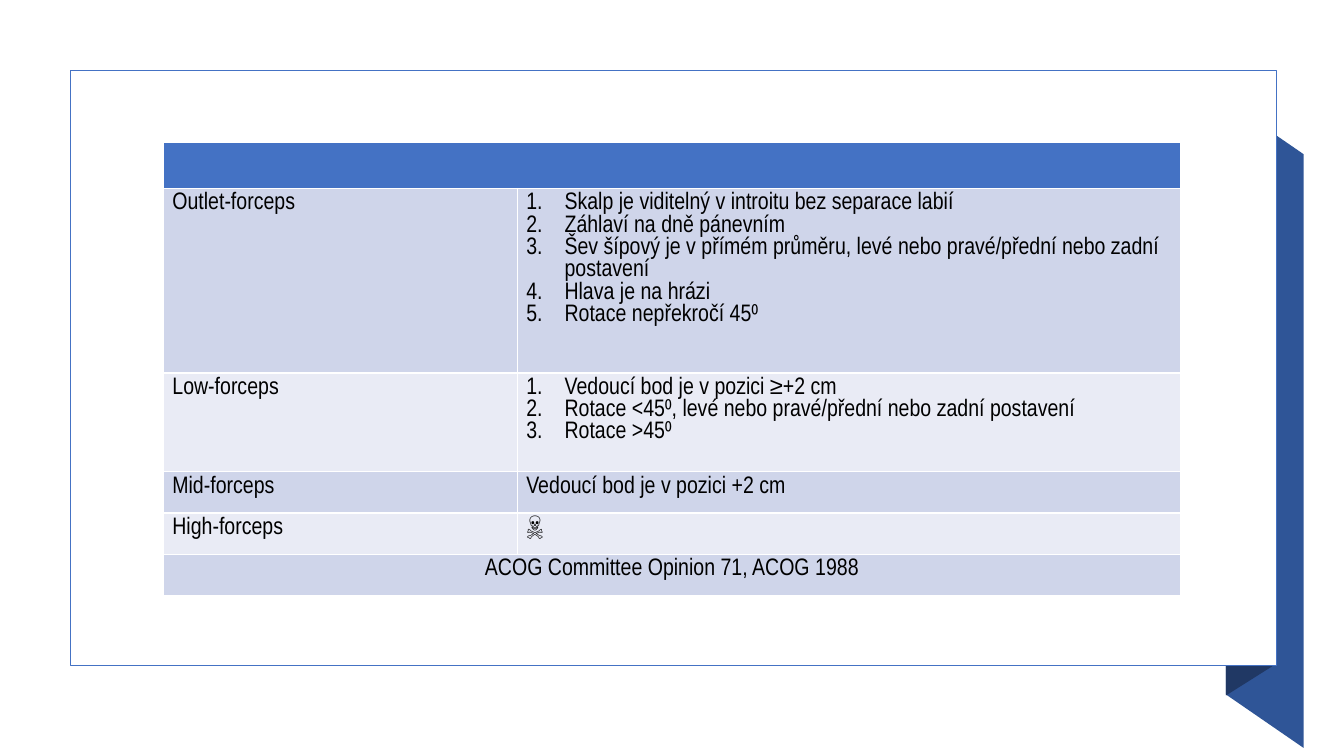
"""Build the slide with the table of forceps delivery types."""
from dataclasses import dataclass

from lxml.etree import SubElement
from pptx import Presentation
from pptx.dml.color import RGBColor
from pptx.enum.shapes import MSO_SHAPE as Preset
from pptx.enum.text import PP_ALIGN as Align
from pptx.oxml.ns import qn
from pptx.util import Inches, Pt

BLUE, WHITE, BLACK = "4472C4", "FFFFFF", "000000"
DARK_BAND, LIGHT_BAND = "CFD5EA", "E9EBF5"
FONT_FORMAT = {"name": "Arial Narrow", "size": Pt(17), "bold": False}
MARGINS = {
    "margin_left": Inches(0.09),
    "margin_right": Inches(0.09),
    "margin_top": Inches(0.04),
    "margin_bottom": Inches(0.04),
}
NUMBER_INDENT = Inches(0.38)
COLUMN_WIDTHS = (3.51, 6.58)


@dataclass
class Fold:
    points: tuple
    fill: str


@dataclass
class ForcepsRow:
    height: float
    fill: str
    label: str = ""
    criteria: tuple = ()
    merged: bool = False


FOLDS = (
    Fold(((12.93, 7.42), (12.16, 6.89), (12.16, 1), (12.93, 1.53)), "2F5597"),
    Fold(((12.62, 6.61), (12.16, 6.9), (12.16, 1), (12.62, 0.7)), "203864"),
)
ROWS = (
    ForcepsRow(0.46, BLUE, merged=True),
    ForcepsRow(1.83, DARK_BAND, "Outlet-forceps", (
        "Skalp je viditelný v introitu bez separace labií",
        "Záhlaví na dně pánevním",
        "Šev šípový je v přímém průměru, levé nebo pravé/přední nebo zadní postavení",
        "Hlava je na hrázi",
        "Rotace nepřekročí 45⁰",
    )),
    ForcepsRow(0.98, LIGHT_BAND, "Low-forceps", (
        "Vedoucí bod je v pozici ≥+2 cm",
        "Rotace <45⁰, levé nebo pravé/přední nebo zadní postavení",
        "Rotace >45⁰",
    )),
    ForcepsRow(0.41, DARK_BAND, "Mid-forceps", ("Vedoucí bod je v pozici +2 cm",)),
    ForcepsRow(0.41, LIGHT_BAND, "High-forceps", ("☠",)),
    ForcepsRow(0.41, DARK_BAND, "ACOG Committee Opinion 71, ACOG 1988", merged=True),
)


def color(value: str) -> RGBColor:
    return RGBColor.from_string(value)


def apply(target, values: dict) -> None:
    for name, value in values.items():
        setattr(target, name, value)


def paint(item, value: str) -> None:
    item.fill.solid()
    item.fill.fore_color.rgb = color(value)


def add_fold(page, fold: Fold) -> None:
    corners = [(Inches(x), Inches(y)) for x, y in fold.points]
    builder = page.shapes.build_freeform(*corners[0])
    builder.add_line_segments(corners[1:], close=True)
    shape = builder.convert_to_shape()
    shape.shadow.inherit = False
    shape.line.fill.background()
    paint(shape, fold.fill)


def add_panel(page) -> None:
    panel = page.shapes.add_shape(
        Preset.RECTANGLE, Inches(0.7), Inches(0.7), Inches(11.96), Inches(5.9))
    panel.shadow.inherit = False
    paint(panel, WHITE)
    panel.line.color.rgb = color(BLUE)
    panel.line.width = Pt(1)


def add_borders(cell) -> None:
    properties = cell._tc.get_or_add_tcPr()
    for position, side in enumerate(("lnL", "lnR", "lnT", "lnB")):
        line = SubElement(properties, qn(f"a:{side}"), w=str(Pt(1)))
        fill = SubElement(line, qn("a:solidFill"))
        SubElement(fill, qn("a:srgbClr"), val=WHITE)
        properties.insert(position, line)


def number(para) -> None:
    properties = para._p.get_or_add_pPr()
    properties.set("marL", str(NUMBER_INDENT))
    properties.set("indent", str(-NUMBER_INDENT))
    SubElement(properties, qn("a:buFont"), typeface="+mj-lt")
    SubElement(properties, qn("a:buAutoNum"), type="arabicPeriod")


def write(cell, lines: tuple, align: Align = Align.LEFT) -> None:
    for index, line in enumerate(lines):
        frame = cell.text_frame
        para = frame.add_paragraph() if index else frame.paragraphs[0]
        para.alignment = align
        if len(lines) > 1:
            number(para)
        span = para.add_run()
        span.text = line
        apply(span.font, FONT_FORMAT)
        span.font.color.rgb = color(BLACK)


def add_forceps_table(page) -> None:
    table = page.shapes.add_table(
        len(ROWS), len(COLUMN_WIDTHS), Inches(1.62), Inches(1.41),
        Inches(sum(COLUMN_WIDTHS)), Inches(sum(row.height for row in ROWS))).table
    for column, width in zip(table.columns, COLUMN_WIDTHS):
        column.width = Inches(width)
    for index, row in enumerate(ROWS):
        table.rows[index].height = Inches(row.height)
        label, criteria = table.cell(index, 0), table.cell(index, 1)
        for cell in (label, criteria):
            apply(cell, MARGINS)
            paint(cell, row.fill)
            add_borders(cell)
        if row.merged:
            label.merge(criteria)
        if row.label:
            write(label, (row.label,), Align.CENTER if row.merged else Align.LEFT)
        write(criteria, row.criteria)


def main() -> None:
    deck = Presentation()
    apply(deck, {"slide_width": Inches(13.33), "slide_height": Inches(7.5)})
    page = deck.slides.add_slide(deck.slide_layouts[6])
    for fold in FOLDS:
        add_fold(page, fold)
    add_panel(page)
    add_forceps_table(page)
    deck.save("out.pptx")


if __name__ == "__main__":
    main()
